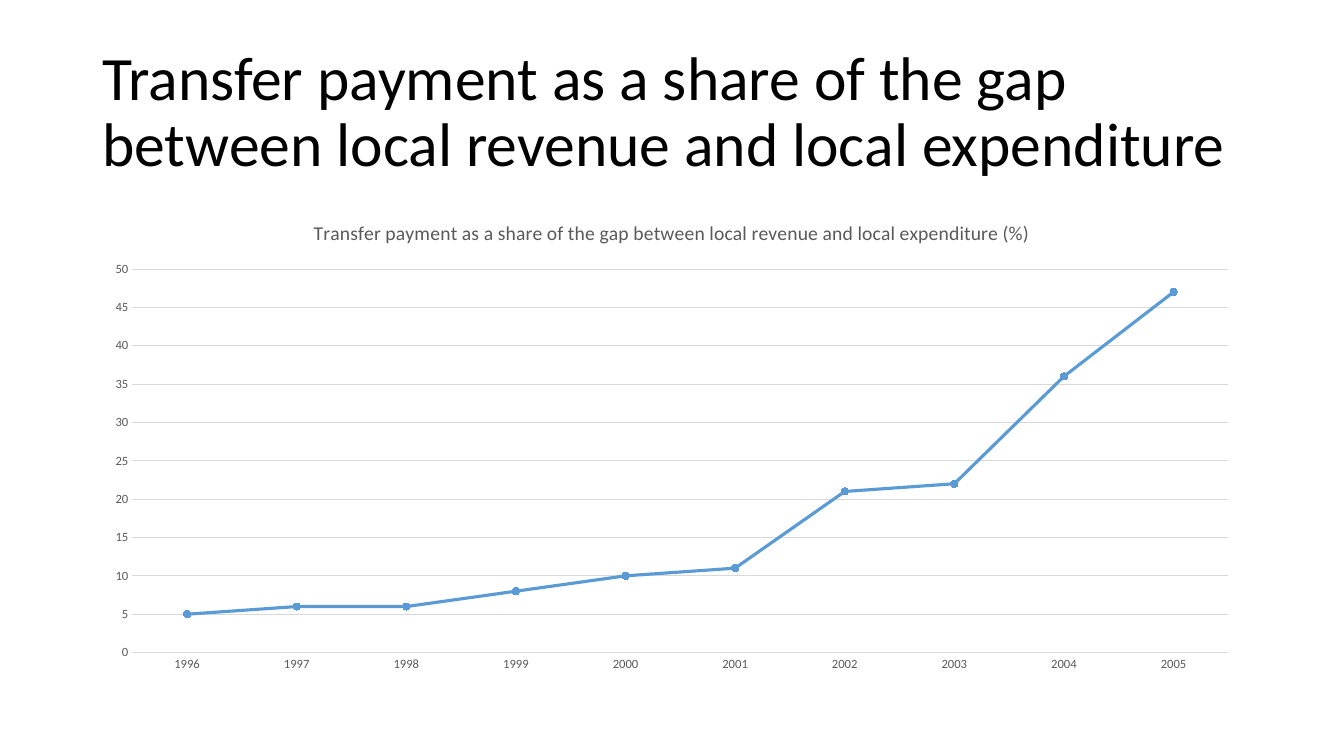
from pptx import Presentation
from pptx.chart.data import CategoryChartData
from pptx.dml.color import RGBColor
from pptx.enum.chart import XL_CHART_TYPE, XL_MARKER_STYLE, XL_TICK_MARK
from pptx.enum.text import MSO_ANCHOR
from pptx.util import Pt

FONT = "Calibri"
COLORS = {
    "background": "FFFFFF",
    "title": "000000",
    "label": "595959",
    "grid": "D9D9D9",
    "series": "5B9BD5",
}
HEADING = "Transfer payment as a share of the gap between local revenue and local expenditure"
YEARS = [str(year) for year in range(1996, 2006)]
SHARES = [5, 6, 6, 8, 10, 11, 21, 22, 36, 47]


def color(name):
    return RGBColor.from_string(COLORS[name])


def style_font(font, size, name):
    font.name = FONT
    font.size = Pt(size)
    font.bold = False
    font.color.rgb = color(name)


def style_line(line, width, name):
    line.width = Pt(width)
    line.color.rgb = color(name)


def add_heading(page, left, top, width, height):
    box = page.shapes.add_textbox(Pt(left), Pt(top), Pt(width), Pt(height))
    frame = box.text_frame
    frame.word_wrap = True
    frame.vertical_anchor = MSO_ANCHOR.MIDDLE
    para = frame.paragraphs[0]
    para.line_spacing = 0.9
    span = para.add_run()
    span.text = HEADING
    style_font(span.font, 44, "title")


def style_axis(axis):
    axis.major_tick_mark = XL_TICK_MARK.NONE
    axis.minor_tick_mark = XL_TICK_MARK.NONE
    style_font(axis.tick_labels.font, 9, "label")


def add_share_chart(page, left, top, width, height):
    data = CategoryChartData()
    data.categories = YEARS
    data.add_series("Series 1", SHARES)
    chart = page.shapes.add_chart(
        XL_CHART_TYPE.LINE_MARKERS, Pt(left), Pt(top), Pt(width), Pt(height), data
    ).chart
    style_font(chart.font, 10, "title")
    chart.has_legend = False

    chart.has_title = True
    chart.chart_title.include_in_layout = False
    span = chart.chart_title.text_frame.paragraphs[0].add_run()
    span.text = f"{HEADING} (%)"
    style_font(span.font, 14, "label")

    style_axis(chart.category_axis)
    style_line(chart.category_axis.format.line, 0.75, "grid")

    shares = chart.value_axis
    style_axis(shares)
    shares.minimum_scale = 0
    shares.maximum_scale = 50
    shares.major_unit = 5
    shares.format.line.fill.background()
    style_line(shares.major_gridlines.format.line, 0.75, "grid")

    plot = chart.plots[0]
    plot.vary_by_categories = False
    series = plot.series[0]
    series.smooth = False
    style_line(series.format.line, 2.25, "series")
    marker = series.marker
    marker.style = XL_MARKER_STYLE.CIRCLE
    marker.size = 5
    marker.format.fill.solid()
    marker.format.fill.fore_color.rgb = color("series")
    style_line(marker.format.line, 0.75, "series")


def main():
    deck = Presentation()
    deck.slide_width = Pt(960)
    deck.slide_height = Pt(540)
    page = deck.slides.add_slide(deck.slide_layouts[6])
    page.background.fill.solid()
    page.background.fill.fore_color.rgb = color("background")
    add_heading(page, 66, 28.75, 828, 104.4)
    add_share_chart(page, 66, 143.75, 828, 342.6)
    deck.save("out.pptx")


if __name__ == "__main__":
    main()
